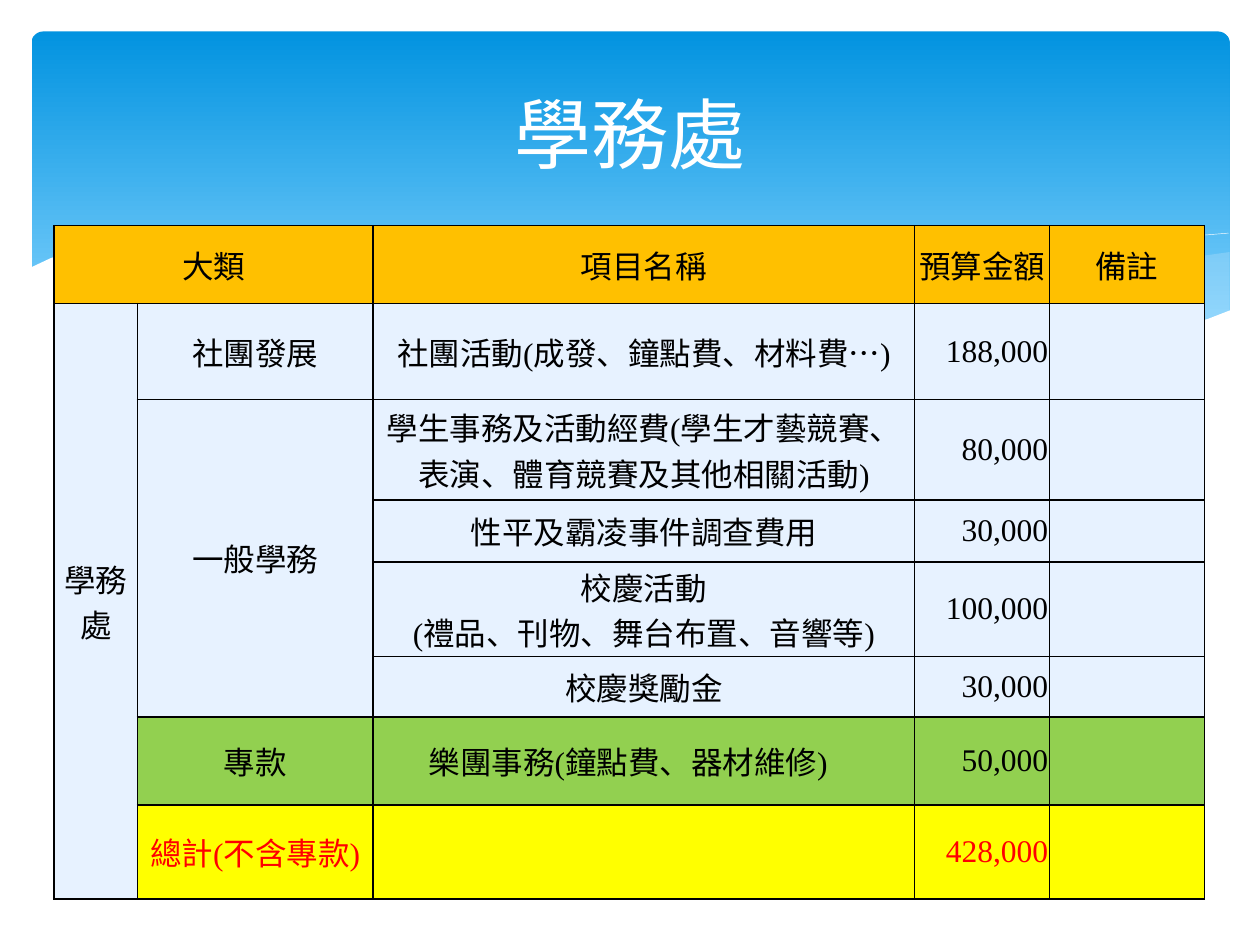
"""Build the student affairs budget slide."""
from lxml import etree
from pptx import Presentation
from pptx.dml.color import RGBColor
from pptx.enum import shapes, text
from pptx.oxml.ns import qn
from pptx.util import Inches, Pt

WHITE = RGBColor(0xFF, 0xFF, 0xFF)
BLACK = RGBColor(0, 0, 0)
RED = RGBColor(0xFF, 0, 0)
SKY_TOP = RGBColor(0x02, 0x93, 0xE0)
SKY_BOTTOM = RGBColor(0x83, 0xD3, 0xFE)
MIST = RGBColor(0xC6, 0xE7, 0xFC)
ORANGE = RGBColor(0xFF, 0xC0, 0)
PALE = RGBColor(0xE7, 0xF2, 0xFF)
GREEN = RGBColor(0x92, 0xD0, 0x50)
YELLOW = RGBColor(0xFF, 0xFF, 0)


def write(tf, content, size=18, font="Times New Roman", color=BLACK,
          align=text.PP_ALIGN.CENTER):
    tf.word_wrap = True
    for i, line in enumerate(content.split("\n")):
        p = tf.add_paragraph() if i else tf.paragraphs[0]
        p.alignment = align
        p.font.size = Pt(size)
        if line:
            r = p.add_run()
            r.text = line
            r.font.size = Pt(size)
            r.font.name = font
            r.font.color.rgb = color


def draw_wave(points, fill=None, opacity=100):
    pts = [(Inches(x), Inches(y)) for x, y in points]
    fb = s.shapes.build_freeform(*pts[0])
    fb.add_line_segments(pts[1:], close=fill is not None)
    sp = fb.convert_to_shape()
    sp.shadow.inherit = False
    if fill is None:
        sp.fill.background()
        sp.line.color.rgb = WHITE
        sp.line.width = Pt(0.25)
    else:
        sp.fill.solid()
        sp.fill.fore_color.rgb = fill
        sp.line.fill.background()
        if opacity < 100:
            clr = sp.fill._xPr.find(qn("a:solidFill"))[0]
            etree.SubElement(clr, qn("a:alpha"), val=str(opacity * 1000))


prs = Presentation()
prs.slide_width, prs.slide_height = Inches(10), Inches(7.5)
s = prs.slides.add_slide(prs.slide_layouts[5])

sky = s.shapes.add_shape(shapes.MSO_SHAPE.ROUNDED_RECTANGLE, Inches(0.25), Inches(0.25),
                         Inches(9.51), Inches(2.7))
sky.adjustments[0] = 0.034
sky.shadow.inherit = False
sky.line.fill.background()
sky.fill.gradient()
sky.fill.gradient_angle = 270
for stop, color, position in zip(sky.fill.gradient_stops, (SKY_TOP, SKY_BOTTOM), (0, 0.9)):
    stop.color.rgb = color
    stop.position = position

right_swell = [
    (9.76, 2), (9.48, 2.04), (9.21, 2.1), (8.91, 2.16), (8.61, 2.23), (8.05, 2.37),
    (7.53, 2.48), (7.06, 2.57), (6.61, 2.65), (6.91, 2.69), (7.19, 2.72), (7.45, 2.75),
    (7.69, 2.77), (8.03, 2.78), (8.35, 2.77), (8.63, 2.75), (8.89, 2.72), (9.21, 2.65),
    (9.49, 2.57), (9.76, 2.47)]
middle_swell = [
    (8.93, 2.73), (8.66, 2.69), (8.07, 2.6), (7.41, 2.47), (6.68, 2.31), (5.98, 2.14),
    (5.41, 2.03), (5.02, 1.96), (4.65, 1.91), (4.2, 1.87), (3.8, 1.85), (3.44, 1.86),
    (3.13, 1.88), (2.86, 1.91), (3.23, 1.96), (3.62, 2.03), (4.04, 2.11), (4.49, 2.22),
    (5.3, 2.4), (5.84, 2.52), (6.34, 2.61), (6.8, 2.68), (7.22, 2.74), (7.61, 2.77),
    (7.96, 2.78), (8.38, 2.78), (8.67, 2.76)]
long_crest = [
    (3.09, 1.95), (3.28, 1.92), (3.53, 1.89), (3.87, 1.87), (4.16, 1.87), (4.5, 1.88),
    (4.89, 1.9), (5.33, 1.94), (5.82, 2), (6.36, 2.08), (6.95, 2.19), (7.6, 2.33),
    (8.31, 2.51), (9.07, 2.72)]
short_crest = [
    (6.13, 2.57), (6.53, 2.46), (6.95, 2.35), (7.48, 2.23), (8.06, 2.1), (8.66, 1.99),
    (8.95, 1.94), (9.24, 1.9), (9.51, 1.87), (9.75, 1.85)]
white_base = [
    (9.77, 2.46), (9.59, 2.53), (9.4, 2.59), (9.2, 2.65), (8.99, 2.69), (8.75, 2.73),
    (8.5, 2.75), (8.09, 2.77), (7.78, 2.76), (7.44, 2.74), (7.08, 2.7), (6.68, 2.65),
    (6.26, 2.58), (5.79, 2.5), (5.29, 2.39), (4.75, 2.27), (4.18, 2.13), (3.65, 2.02),
    (3.16, 1.94), (2.71, 1.88), (2.3, 1.85), (1.93, 1.84), (1.61, 1.84), (1.32, 1.86),
    (1.06, 1.89), (0.85, 1.93), (0.67, 1.97), (0.52, 2.01), (0.4, 2.05), (0.23, 2.13),
    (0.23, 3.29), (9.77, 3.29)]
draw_wave(right_swell, MIST, 29)
draw_wave(middle_swell, MIST, 40)
draw_wave(long_crest)
draw_wave(short_crest)
draw_wave(white_base, WHITE)

title = s.shapes.title
title.left, title.top, title.width, title.height = map(Inches, (0.5, 0.37, 9, 1.37))
tf = title.text_frame
tf.vertical_anchor = text.MSO_ANCHOR.MIDDLE
tf.margin_left = tf.margin_right = tf.margin_top = tf.margin_bottom = Inches(0.05)
write(tf, "學務處", size=44, font="Calibri", color=WHITE)
s.shapes._spTree.append(title._element)

col_widths = [0.66, 1.87, 4.3, 1.07, 1.23]
row_heights = [0.62, 0.76, 0.8, 0.49, 0.75, 0.48, 0.7, 0.7]
rows = [
    (ORANGE, "大類", "", "項目名稱", "預算金額", "備註"),
    (PALE, "學務處", "社團發展", "社團活動(成發、鐘點費、材料費…)", "188,000", ""),
    (PALE, "", "一般學務", "學生事務及活動經費(學生才藝競賽、表演、體育競賽及其他相關活動)", "80,000", ""),
    (PALE, "", "", "性平及霸凌事件調查費用", "30,000", ""),
    (PALE, "", "", "校慶活動\n(禮品、刊物、舞台布置、音響等)", "100,000", ""),
    (PALE, "", "", "校慶獎勵金", "30,000", ""),
    (GREEN, "", "專款", "樂團事務(鐘點費、器材維修)　", "50,000", ""),
    (YELLOW, "", "總計(不含專款)", "", "428,000", ""),
]
table = s.shapes.add_table(len(rows), len(col_widths), Inches(0.43), Inches(1.79),
                           Inches(sum(col_widths)), Inches(sum(row_heights))).table
table.first_row = table.horz_banding = False
for col, width in zip(table.columns, col_widths):
    col.width = Inches(width)
for row, height in zip(table.rows, row_heights):
    row.height = Inches(height)

for i, (row_fill, *values) in enumerate(rows):
    for j, value in enumerate(values):
        cell = table.cell(i, j)
        cell.margin_left = cell.margin_right = Inches(0.01)
        cell.margin_top = cell.margin_bottom = Inches(0.01)
        cell.vertical_anchor = text.MSO_ANCHOR.MIDDLE
        tcPr = cell._tc.get_or_add_tcPr()
        for side in ("a:lnL", "a:lnR", "a:lnT", "a:lnB"):
            ln = etree.SubElement(tcPr, qn(side), w=str(Pt(1)))
            solid = etree.SubElement(ln, qn("a:solidFill"))
            etree.SubElement(solid, qn("a:srgbClr"), val=str(BLACK))
        cell.fill.solid()
        cell.fill.fore_color.rgb = PALE if i and j == 0 else row_fill
        is_amount = i > 0 and j == 3
        write(cell.text_frame, value, color=RED if row_fill == YELLOW else BLACK,
              align=text.PP_ALIGN.RIGHT if is_amount else text.PP_ALIGN.CENTER)

for first, last in (((0, 0), (0, 1)), ((1, 0), (7, 0)), ((2, 1), (5, 1))):
    table.cell(*first).merge(table.cell(*last))

prs.save("out.pptx")
